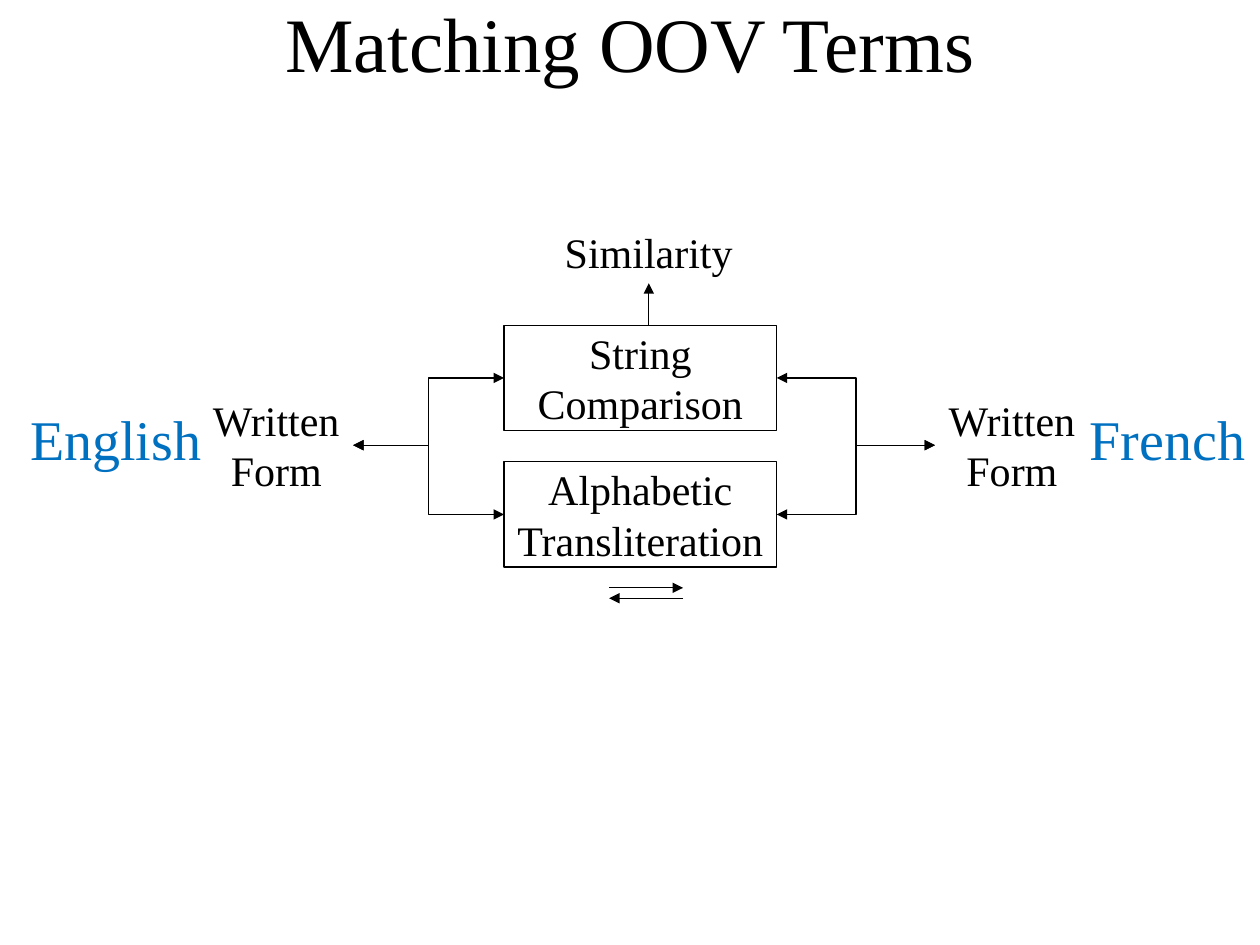
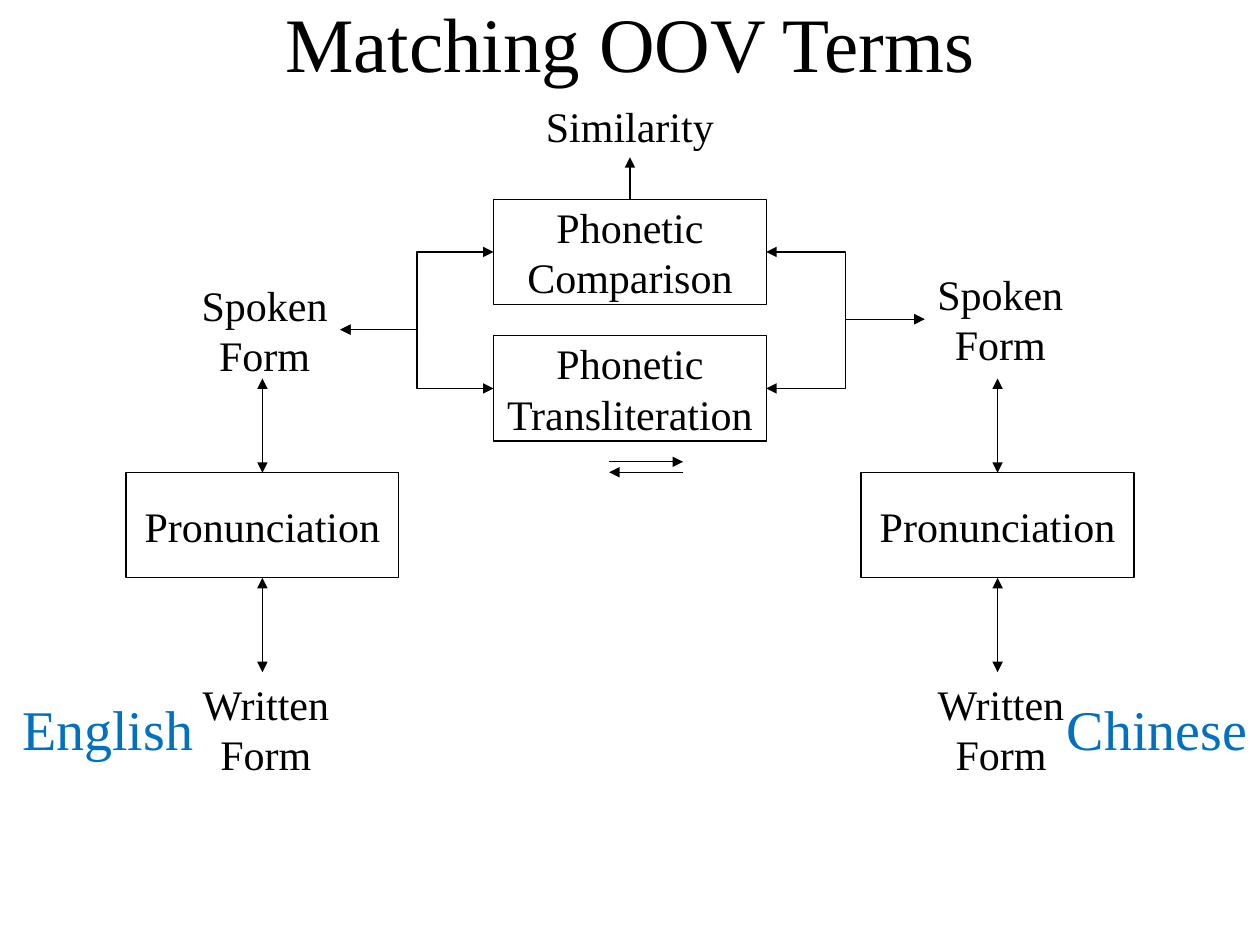
from dataclasses import dataclass

import pptx
import pptx.dml.color
import pptx.enum.shapes
import pptx.enum.text
import pptx.oxml
import pptx.oxml.ns
import pptx.util
from pptx.util import Cm

TITLE_ONLY = 5
TOP, LEFT, BOTTOM, RIGHT = range(4)
ALIGN = pptx.enum.text.PP_ALIGN
KIND = pptx.enum.shapes.MSO_CONNECTOR


@dataclass(frozen=True)
class Theme:
    font: str = "Times New Roman"
    ink: str = "000000"
    accent: str = "0070C0"
    title_size: int = 44
    language_size: int = 32
    label_size: int = 24
    line_width: float = 0.75
    box_width: float = 5.5
    box_height: float = 2.12
    label_height: float = 2.29
    arrow_length: float = 1.9


THEME = Theme()


def rgb(value):
    return pptx.dml.color.RGBColor.from_string(value)


def write(tf, text, size, color=THEME.ink, align=ALIGN.CENTER):
    """Write one paragraph for each line of the text."""
    for i, line in enumerate(text.split("\n")):
        p = tf.paragraphs[0] if i == 0 else tf.add_paragraph()
        p.alignment = align
        r = p.add_run()
        r.text = line
        r.font.name = THEME.font
        r.font.size = pptx.util.Pt(size)
        r.font.color.rgb = rgb(color)


def add_title(s, text):
    sp = s.shapes.title
    sp.left, sp.top, sp.width, sp.height = Cm(1.9), Cm(0), Cm(21.6), Cm(1.7)
    tf = sp.text_frame
    tf.auto_size = pptx.enum.text.MSO_AUTO_SIZE.NONE
    tf.vertical_anchor = pptx.enum.text.MSO_ANCHOR.MIDDLE
    write(tf, text, THEME.title_size)


def add_label(s, text, left, top, width, height=THEME.label_height,
              size=THEME.label_size, color=THEME.ink, align=ALIGN.CENTER):
    sp = s.shapes.add_textbox(Cm(left), Cm(top), Cm(width), Cm(height))
    sp.text_frame.word_wrap = False
    sp.text_frame.auto_size = pptx.enum.text.MSO_AUTO_SIZE.SHAPE_TO_FIT_TEXT
    write(sp.text_frame, text, size, color, align)
    return sp


def add_language(s, text, left, top, width):
    add_label(s, text, left, top, width, 1.63, THEME.language_size,
              THEME.accent, ALIGN.LEFT)


def add_box(s, text, left, top):
    sp = s.shapes.add_shape(pptx.enum.shapes.MSO_SHAPE.RECTANGLE, Cm(left), Cm(top),
                            Cm(THEME.box_width), Cm(THEME.box_height))
    sp.shadow.inherit = False
    sp.fill.background()
    sp.line.color.rgb = rgb(THEME.ink)
    sp.line.width = pptx.util.Pt(THEME.line_width)
    sp.text_frame.word_wrap = False
    sp.text_frame.vertical_anchor = pptx.enum.text.MSO_ANCHOR.MIDDLE
    write(sp.text_frame, text, THEME.label_size)
    return sp


def side_point(sp, side):
    """Return the middle of one side of a shape."""
    x = {LEFT: sp.left, RIGHT: sp.left + sp.width}.get(side, sp.left + sp.width // 2)
    y = {TOP: sp.top, BOTTOM: sp.top + sp.height}.get(side, sp.top + sp.height // 2)
    return x, y


def add_arrow(s, begin, end, kind=KIND.STRAIGHT, both=False):
    """Draw an arrow; each end is an (x, y) point or a (shape, side) pair."""
    joins = [e if hasattr(e[0], "shape_id") else None for e in (begin, end)]
    points = [side_point(*j) if j else e for j, e in zip(joins, (begin, end))]
    cxn = s.shapes.add_connector(kind, *points[0], *points[1])
    if joins[0]:
        cxn.begin_connect(*joins[0])
    if joins[1]:
        cxn.end_connect(*joins[1])
    cxn.line.color.rgb = rgb(THEME.ink)
    cxn.line.width = pptx.util.Pt(THEME.line_width)
    ln = cxn.line._get_or_add_ln()
    for tag in ("a:headEnd", "a:tailEnd") if both else ("a:tailEnd",):
        end_mark = pptx.oxml.parse_xml(f'<{tag} {pptx.oxml.ns.nsdecls("a")} type="triangle"/>')
        ln.append(end_mark)
    cxn._element.spPr.append(
        pptx.oxml.parse_xml(f'<a:effectLst {pptx.oxml.ns.nsdecls("a")}/>'))


def add_matcher(s, left, top, comparison, transliteration, forms, similarity_shift=0):
    """Stack the two matching steps and join both to the left and right forms."""
    gap = 0.63
    second_top = top + THEME.box_height + gap
    boxes = [add_box(s, comparison, left, top),
             add_box(s, transliteration, left, second_top)]
    for form, near, far in zip(forms, (RIGHT, LEFT), (LEFT, RIGHT)):
        for box in boxes:
            add_arrow(s, (form, near), (box, far), KIND.ELBOW, both=True)

    width, height = 3.89, 1.27
    center = left + THEME.box_width / 2 + similarity_shift
    similarity = add_label(s, "Similarity", center - width / 2, top - 2.12,
                           width, height, align=ALIGN.LEFT)
    start = (Cm(center), Cm(top)) if similarity_shift else (boxes[0], TOP)
    add_arrow(s, start, (similarity, BOTTOM))

    x1, x2 = Cm(12.28), Cm(13.77)
    y = second_top + THEME.box_height + 0.42
    add_arrow(s, (x1, Cm(y)), (x2, Cm(y)))
    add_arrow(s, (x2, Cm(y + 0.21)), (x1, Cm(y + 0.21)))


def add_pronunciation(s, left, top):
    """Place a pronunciation step with the written form below it."""
    box = add_box(s, "Pronunciation", left, top)
    x = box.left + box.width // 2
    bottom = top + THEME.box_height
    add_arrow(s, (box, TOP), (x, Cm(top - THEME.arrow_length)), both=True)
    add_arrow(s, (box, BOTTOM), (x, Cm(bottom + THEME.arrow_length)), both=True)
    add_label(s, "Written\nForm", left + 1.27, bottom + THEME.arrow_length, 3.1)


def new_slide(prs):
    s = prs.slides.add_slide(prs.slide_layouts[TITLE_ONLY])
    add_title(s, "Matching OOV Terms")
    return s


def add_written_slide(prs):
    s = new_slide(prs)
    forms = [add_label(s, "Written\nForm", left, 7.83, 3.1) for left in (4.02, 18.85)]
    add_matcher(s, 10.16, 6.56, "String\nComparison", "Alphabetic\nTransliteration",
                forms, similarity_shift=0.17)
    add_language(s, "English", 0.36, 8.03, 3.99)
    add_language(s, "French", 21.72, 8.03, 3.68)


def add_spoken_slide(prs):
    s = new_slide(prs)
    forms = [add_label(s, "Spoken\nForm", left, top, 3.05)
             for left, top in ((3.81, 5.5), (18.64, 5.29))]
    add_matcher(s, 9.95, 4.02, "Phonetic\nComparison", "Phonetic\nTransliteration", forms)
    for left in (2.54, 17.36):
        add_pronunciation(s, left, 9.53)
    add_language(s, "English", 0.2, 13.87, 3.99)
    add_language(s, "Chinese", 21.26, 13.87, 4.19)


def main():
    prs = pptx.Presentation()
    prs.slide_width, prs.slide_height = Cm(25.4), Cm(19.05)
    add_written_slide(prs)
    add_spoken_slide(prs)
    prs.save("out.pptx")


if __name__ == "__main__":
    main()
